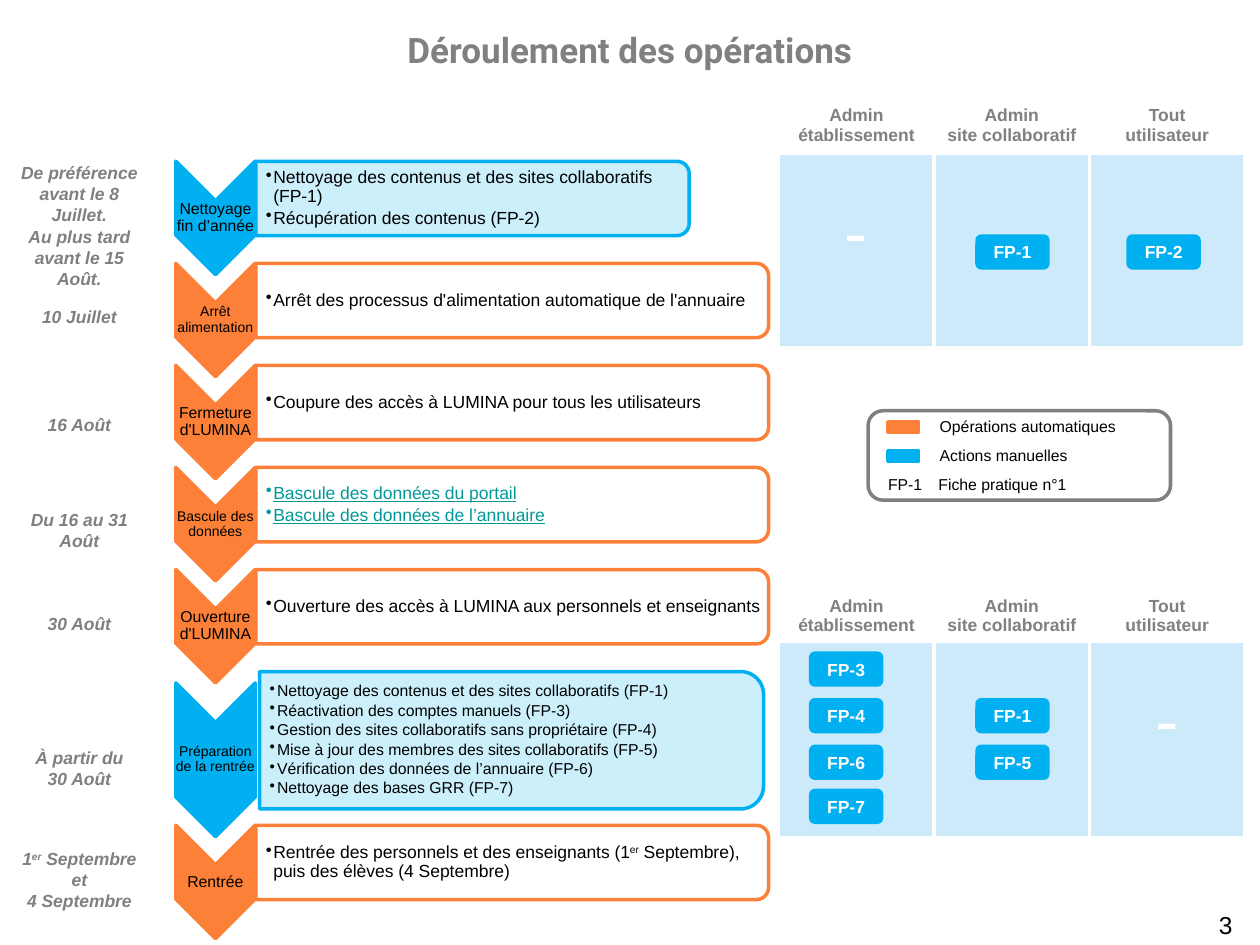
import pptx
import pptx.util
import pptx.dml.color
import pptx.enum.shapes
import pptx.enum.text
import pptx.oxml.ns
import lxml.etree
from dataclasses import dataclass

Inches = pptx.util.Inches
Pt = pptx.util.Pt
Shape = pptx.enum.shapes.MSO_SHAPE
Align = pptx.enum.text.PP_ALIGN
Anchor = pptx.enum.text.MSO_ANCHOR
qn = pptx.oxml.ns.qn


@dataclass(frozen=True)
class Theme:
    manual: str = "00B0F0"
    automatic: str = "FC8038"
    grey: str = "808080"
    black: str = "000000"
    white: str = "FFFFFF"
    link: str = "009999"
    cell: str = "009AE5"
    body: str = "Arial"
    heading: str = "Roboto"
    title_size: int = 20
    text_size: int = 10
    small_size: int = 9
    tiny_size: int = 8
    dash_size: int = 40
    page_size: int = 14
    line: int = 2


THEME = Theme()
TITLE = "Déroulement des opérations"
PAGE_NUMBER = "3"

STEPS = [
    dict(label="Nettoyage fin d’année", kind="manual", width=3.44,
         items=["Nettoyage des contenus et des sites collaboratifs (FP-1)",
                "Récupération des contenus (FP-2)"]),
    dict(label="Arrêt alimentation", label_size=THEME.tiny_size,
         items=["Arrêt des processus d'alimentation automatique de l'annuaire"]),
    dict(label="Fermeture d'LUMINA",
         items=["Coupure des accès à LUMINA pour tous les utilisateurs"]),
    dict(label="Bascule des données", label_size=THEME.tiny_size, link=True,
         items=["Bascule des données du portail", "Bascule des données de l’annuaire"]),
    dict(label="Ouverture d'LUMINA",
         items=["Ouverture des accès à LUMINA aux personnels et enseignants"]),
    dict(label="Préparation de la rentrée", label_size=THEME.tiny_size, kind="manual",
         size=THEME.small_size, top=5.42, height=1.22,
         left=2.06, width=4.0, panel_top=5.33, panel_height=1.09,
         items=["Nettoyage des contenus et des sites collaboratifs (FP-1)",
                "Réactivation des comptes manuels (FP-3)",
                "Gestion des sites collaboratifs sans propriétaire (FP-4)",
                "Mise à jour des membres des sites collaboratifs (FP-5)",
                "Vérification des données de l’annuaire (FP-6)",
                "Nettoyage des bases GRR (FP-7)"]),
    dict(label="Rentrée", top=6.55,
         items=["Rentrée des personnels et des enseignants (1^er^ Septembre), "
                "puis des élèves (4 Septembre)"]),
]
FIRST_TOP, PITCH = 1.28, 0.81
CHEVRON_CENTRE, CHEVRON_WIDTH = 1.71, 0.63

DATES = [
    (1.24, 0.77, ["De préférence", "avant le 8 Juillet.", "Au plus tard", "avant le 15 Août."]),
    (2.38, 0.27, ["10 Juillet"]),
    (3.24, 0.27, ["16 Août"]),
    (3.99, 0.27, ["Du 16 au 31 Août"]),
    (4.82, 0.27, ["30 Août"]),
    (5.88, 0.44, ["À partir du", "30 Août"]),
    (6.68, 0.44, ["1^er^ Septembre et", "4 Septembre"]),
]

ROLES = [["Admin", "établissement"], ["Admin", "site collaboratif"], ["Tout", "utilisateur"]]
ROW_HEIGHTS = [0.43, 1.53, 2.34, 1.55]
HEADER_ROWS = {0: Anchor.TOP, 2: Anchor.BOTTOM}
DASH_CELLS = [(1, 0), (3, 2)]

BADGES = [
    (6.42, [("FP-3", 5.17), ("FP-4", 5.54), ("FP-6", 5.91), ("FP-7", 6.26)]),
    (7.74, [("FP-1", 1.86), ("FP-1", 5.54), ("FP-5", 5.91)]),
    (8.94, [("FP-2", 1.86)]),
]
LEGEND = [("automatic", "Opérations automatiques"), ("manual", "Actions manuelles")]
LEGEND_NOTE = "FP-1\tFiche pratique n°1"


def rgb(value):
    return pptx.dml.color.RGBColor.from_string(value)


def set_fill(fill, colour, alpha=100):
    fill.solid()
    fill.fore_color.rgb = rgb(colour)
    if alpha < 100:
        node = fill._xPr.find(qn("a:solidFill"))[0]
        lxml.etree.SubElement(node, qn("a:alpha")).set("val", str(alpha * 1000))


def write(frame, lines, size=THEME.text_size, colour=THEME.black, align=Align.LEFT,
          anchor=Anchor.TOP, margins=None, wrap=True, spacing=None, bullet=False,
          tab=None, font=THEME.body, bold=False, italic=False, underline=False):
    frame.word_wrap = wrap
    frame.vertical_anchor = anchor
    if margins:
        (frame.margin_left, frame.margin_top,
         frame.margin_right, frame.margin_bottom) = map(Inches, margins)
    for number, line in enumerate(lines):
        para = frame.paragraphs[0] if number == 0 else frame.add_paragraph()
        para.alignment = align
        if spacing:
            para.line_spacing = spacing
        properties = para._p.get_or_add_pPr()
        if bullet:
            para.level = 1
            para.space_after = Pt(size * 0.15)
            properties.set("marL", str(Inches(0.06)))
            properties.set("indent", str(-Inches(0.06)))
            lxml.etree.SubElement(properties, qn("a:buChar")).set("char", "•")
        if tab:
            stops = lxml.etree.SubElement(properties, qn("a:tabLst"))
            stop = lxml.etree.SubElement(stops, qn("a:tab"))
            stop.set("pos", str(Inches(tab)))
            stop.set("algn", "l")
        for index, piece in enumerate(line.split("^")):
            span = para.add_run()
            span.text = piece
            span.font.name, span.font.size = font, Pt(size)
            span.font.color.rgb = rgb(colour)
            span.font.bold, span.font.italic = bold, italic
            span.font.underline = underline
            if index % 2:
                span.font._element.set("baseline", "30000")


def add_text(page, place, lines, **style):
    box = page.shapes.add_textbox(*map(Inches, place))
    write(box.text_frame, lines, **style)


def add_box(page, kind, place, fill=None, line=None, alpha=100):
    box = page.shapes.add_shape(kind, *map(Inches, place))
    box.shadow.inherit = False
    if fill:
        set_fill(box.fill, fill, alpha)
    else:
        box.fill.background()
    if line:
        box.line.color.rgb = rgb(line)
        box.line.width = Pt(THEME.line)
    else:
        box.line.fill.background()
    return box


def add_turned(page, kind, left, top, width, height, **style):
    shift = (width - height) / 2
    box = add_box(page, kind, (left + shift, top - shift, height, width), **style)
    box.rotation = 90


def add_step(page, number, step):
    top = step.get("top", FIRST_TOP + number * PITCH)
    height = step.get("height", 0.9)
    manual = step.get("kind") == "manual"
    colour = THEME.manual if manual else THEME.automatic
    chevron = (CHEVRON_CENTRE - CHEVRON_WIDTH / 2, top, CHEVRON_WIDTH, height)
    add_turned(page, Shape.CHEVRON, *chevron, fill=colour, line=colour)
    add_text(page, chevron, [step["label"]], size=step.get("label_size", THEME.small_size),
             align=Align.CENTER, anchor=Anchor.MIDDLE, margins=(0, 0, 0, 0), spacing=0.9)
    panel = (step.get("left", 2.03), step.get("panel_top", top),
             step.get("width", 4.07), step.get("panel_height", 0.59))
    add_turned(page, Shape.ROUND_2_SAME_RECTANGLE, *panel, line=colour,
               fill=THEME.manual if manual else THEME.white, alpha=20 if manual else 90)
    link = step.get("link", False)
    add_text(page, panel, step["items"], size=step.get("size", THEME.text_size),
             colour=THEME.link if link else THEME.black, underline=link, bullet=True,
             anchor=Anchor.MIDDLE, margins=(0.08, 0.01, 0.01, 0.01), spacing=0.9)


def add_borders(cell):
    for side, width in (("L", 2.25), ("R", 2.25), ("T", 1), ("B", 1)):
        line = lxml.etree.SubElement(cell._tc.get_or_add_tcPr(), qn("a:ln" + side))
        line.set("w", str(Pt(width)))
        paint = lxml.etree.SubElement(line, qn("a:solidFill"))
        lxml.etree.SubElement(paint, qn("a:srgbClr")).set("val", THEME.white)


def add_roles_table(page):
    place = map(Inches, (6.18, 0.79, 3.7, sum(ROW_HEIGHTS)))
    table = page.shapes.add_table(len(ROW_HEIGHTS), len(ROLES), *place).table
    table.first_row = table.horz_banding = False
    for row, height in enumerate(ROW_HEIGHTS):
        table.rows[row].height = Inches(height)
        for column, role in enumerate(ROLES):
            cell = table.cell(row, column)
            add_borders(cell)
            if row in HEADER_ROWS:
                cell.fill.background()
                write(cell.text_frame, role, colour=THEME.grey, align=Align.CENTER, bold=True)
                cell.vertical_anchor = HEADER_ROWS[row]
                continue
            set_fill(cell.fill, THEME.cell, 20)
            if (row, column) in DASH_CELLS:
                write(cell.text_frame, ["-"], size=THEME.dash_size, colour=THEME.white,
                      align=Align.CENTER)
                cell.margin_top = Inches(0.32)


def add_legend(page):
    for number, (kind, text) in enumerate(LEGEND):
        top = 3.26 + number * 0.23
        colour = getattr(THEME, kind)
        add_box(page, Shape.RECTANGLE, (7.05, top + 0.09, 0.24, 0.08), fill=colour, line=colour)
        add_text(page, (7.36, top, 1.61, 0.25), [text], size=THEME.small_size, wrap=False)
    add_text(page, (6.95, 3.72, 1.96, 0.25), [LEGEND_NOTE], size=THEME.small_size, tab=0.4)
    add_box(page, Shape.ROUNDED_RECTANGLE, (6.89, 3.26, 2.4, 0.71), line=THEME.grey)


def main():
    deck = pptx.Presentation()
    deck.slide_width, deck.slide_height = Inches(10), Inches(7.5)
    page = deck.slides.add_slide(deck.slide_layouts[5])
    title = page.shapes.title
    title.left, title.top, title.width, title.height = map(Inches, (0, 0.18, 10, 0.44))
    write(title.text_frame, [TITLE], size=THEME.title_size, colour=THEME.grey,
          align=Align.CENTER, font=THEME.heading, bold=True)
    for number, step in enumerate(STEPS):
        add_step(page, number, step)
    for top, height, lines in DATES:
        add_text(page, (0, top, 1.26, height), lines, colour=THEME.grey,
                 align=Align.CENTER, wrap=False, bold=True, italic=True)
    add_roles_table(page)
    for left, column in BADGES:
        for text, top in column:
            badge = add_box(page, Shape.ROUNDED_RECTANGLE, (left, top, 0.59, 0.28),
                            fill=THEME.manual)
            write(badge.text_frame, [text], colour=THEME.white, align=Align.CENTER,
                  anchor=Anchor.MIDDLE, bold=True)
    add_legend(page)
    add_text(page, (7.55, 7.17, 2.33, 0.33), [PAGE_NUMBER], size=THEME.page_size,
             align=Align.RIGHT)
    deck.save("out.pptx")


if __name__ == "__main__":
    main()
